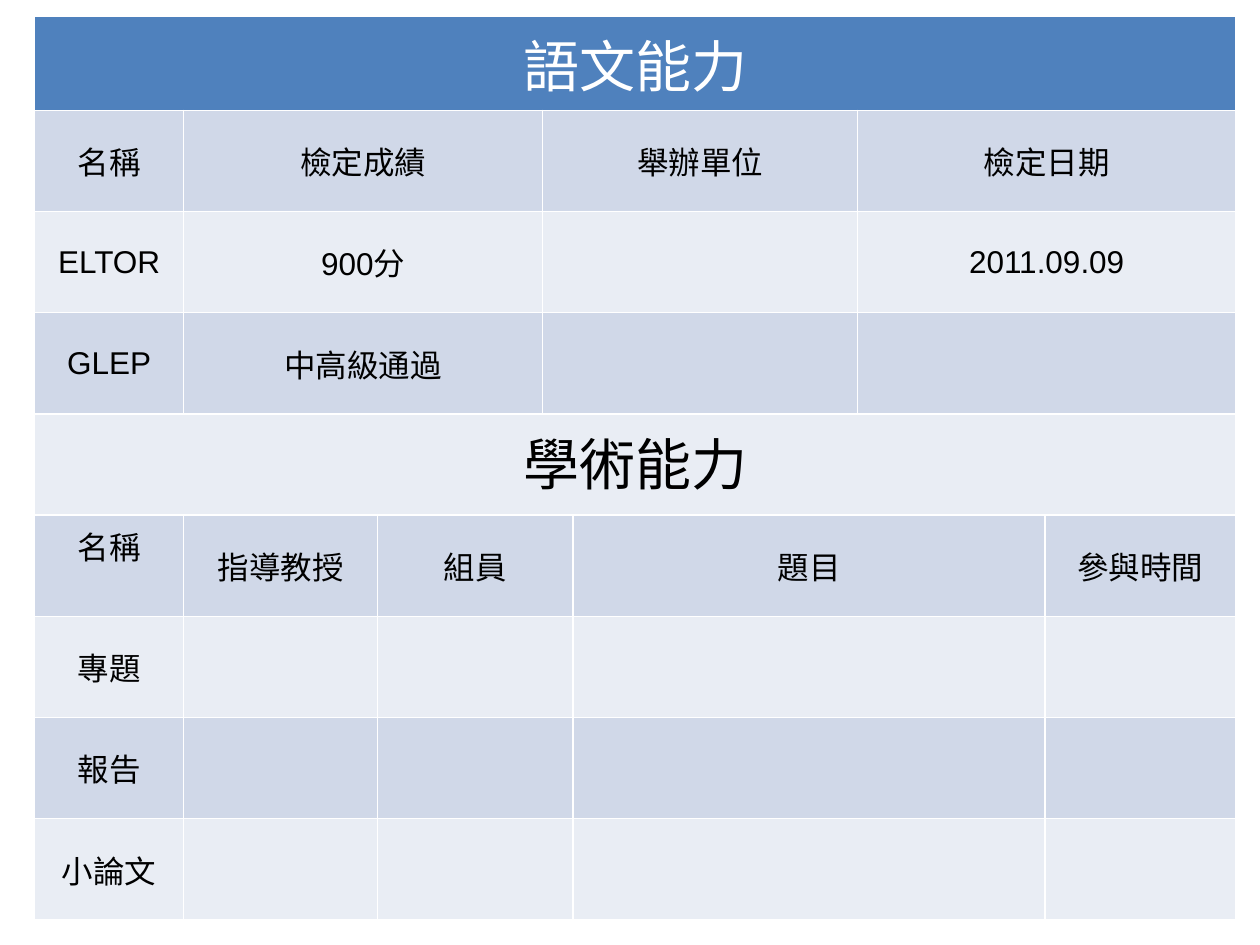
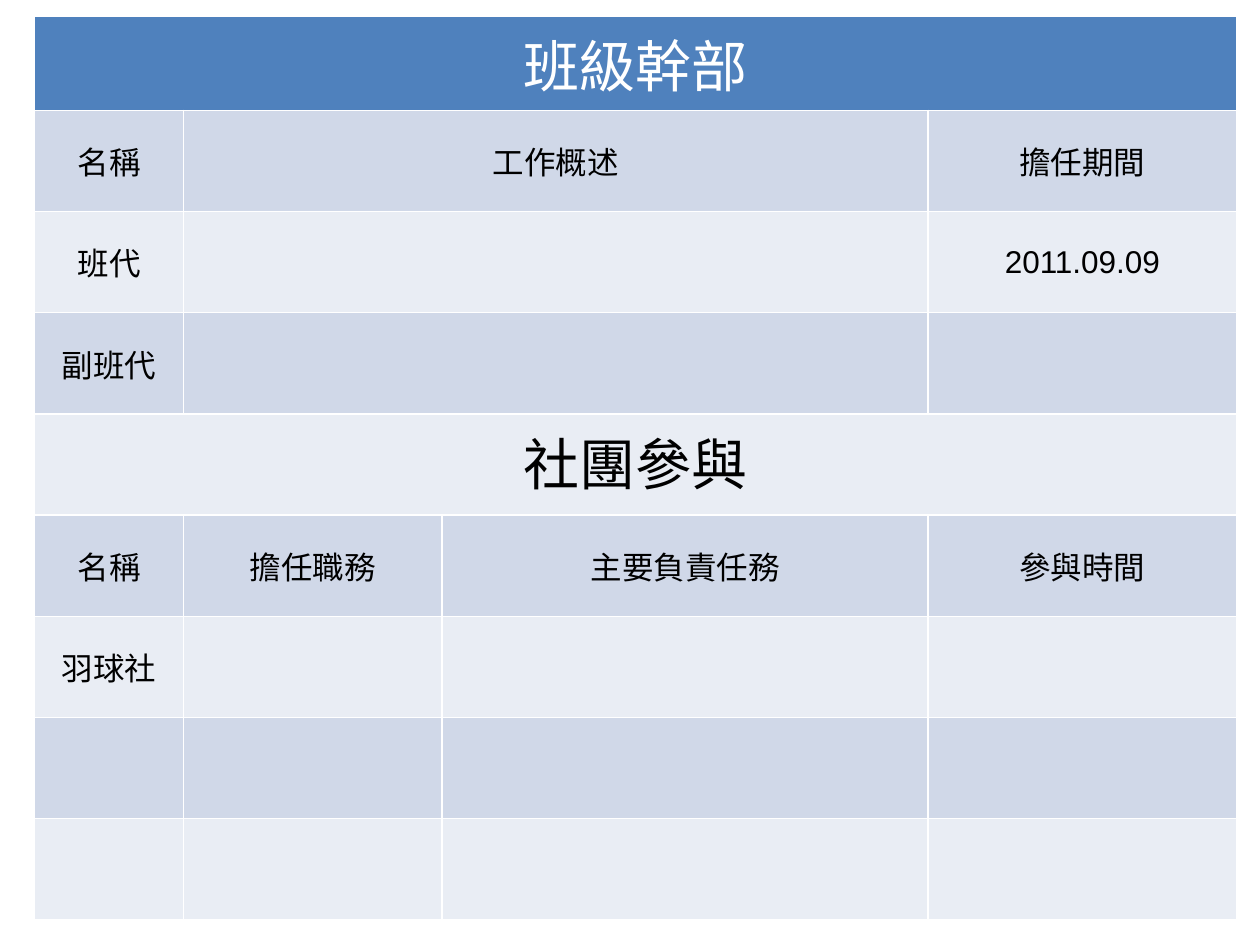
import pptx
import pptx.dml.color
import pptx.enum.text
import pptx.util

Cm = pptx.util.Cm
Pt = pptx.util.Pt
RGBColor = pptx.dml.color.RGBColor

BLUE = RGBColor(0x4F, 0x81, 0xBD)
BAND_DARK = RGBColor(0xD0, 0xD8, 0xE8)
BAND_LIGHT = RGBColor(0xE9, 0xED, 0xF4)
WHITE = RGBColor(0xFF, 0xFF, 0xFF)
BLACK = RGBColor(0x00, 0x00, 0x00)

LEFT, TOP = 0.7, 0.33
TITLE_HEIGHT, ROW_HEIGHT = 1.6, 2.04

# Each slide: column widths, then sections of (title, column spans, rows)
SLIDES = [
    ([3, 3.91, 3.33, 0.61, 5.74, 3.78, 3.84], [
        ("語文能力", [1, 2, 2, 2], [
            ["名稱", "檢定成績", "舉辦單位", "檢定日期"],
            ["ELTOR", "900分", "", "2011.09.09"],
            ["GLEP", "中高級通過", "", ""]]),
        ("學術能力", [1, 1, 2, 2, 1], [
            ["名稱", "指導教授", "組員", "題目", "參與時間"],
            ["專題", "", "", "", ""],
            ["報告", "", "", "", ""],
            ["小論文", "", "", "", ""]]),
    ]),
    ([3, 5.21, 9.8, 6.22], [
        ("班級幹部", [1, 2, 1], [
            ["名稱", "工作概述", "擔任期間"],
            ["班代", "", "2011.09.09"],
            ["副班代", "", ""]]),
        ("社團參與", [1, 1, 1, 1], [
            ["名稱", "擔任職務", "主要負責任務", "參與時間"],
            ["羽球社", "", "", ""],
            ["", "", "", ""],
            ["", "", "", ""]]),
    ]),
]


def fill_row(table, row, spans, texts, size, anchor):
    """Merge the row's cells by spans, band them and write the texts."""
    col = 0
    for span, text in zip(spans, texts):
        cell = table.cell(row, col)
        if span > 1:
            cell.merge(table.cell(row, col + span - 1))
        for c in range(col, col + span):
            fill = table.cell(row, c).fill
            fill.solid()
            fill.fore_color.rgb = BLUE if row == 0 else (BAND_LIGHT, BAND_DARK)[row % 2]
        cell.vertical_anchor = anchor
        p = cell.text_frame.paragraphs[0]
        p.text = text
        p.alignment = pptx.enum.text.PP_ALIGN.CENTER
        p.font.size = Pt(size)
        p.font.name = "Arial"
        p.font.bold = False
        p.font.color.rgb = WHITE if row == 0 else BLACK
        col += span


prs = pptx.Presentation()
prs.slide_width = Cm(25.4)
prs.slide_height = Cm(19.05)
tables = []

for widths, sections in SLIDES:
    s = prs.slides.add_slide(prs.slide_layouts[6])
    row_count = sum(1 + len(rows) for title, spans, rows in sections)
    height = TITLE_HEIGHT + (row_count - 1) * ROW_HEIGHT
    table = s.shapes.add_table(row_count, len(widths), Cm(LEFT), Cm(TOP),
                               Cm(sum(widths)), Cm(height)).table
    for column, width in zip(table.columns, widths):
        column.width = Cm(width)
    for i, table_row in enumerate(table.rows):
        table_row.height = Cm(ROW_HEIGHT if i else TITLE_HEIGHT)

    row = 0
    for title, spans, rows in sections:
        fill_row(table, row, [len(widths)], [title], 32, pptx.enum.text.MSO_ANCHOR.TOP)
        for texts in rows:
            row += 1
            fill_row(table, row, spans, texts, 18, pptx.enum.text.MSO_ANCHOR.MIDDLE)
        row += 1

    second_header = len(sections[0][2]) + 2
    table.cell(second_header, 0).text_frame.paragraphs[0].font.name = "Calibri"
    tables.append(table)

# The second name heading on the first slide sits above the middle
tables[0].cell(5, 0).margin_bottom = Cm(0.94)

prs.save("out.pptx")
